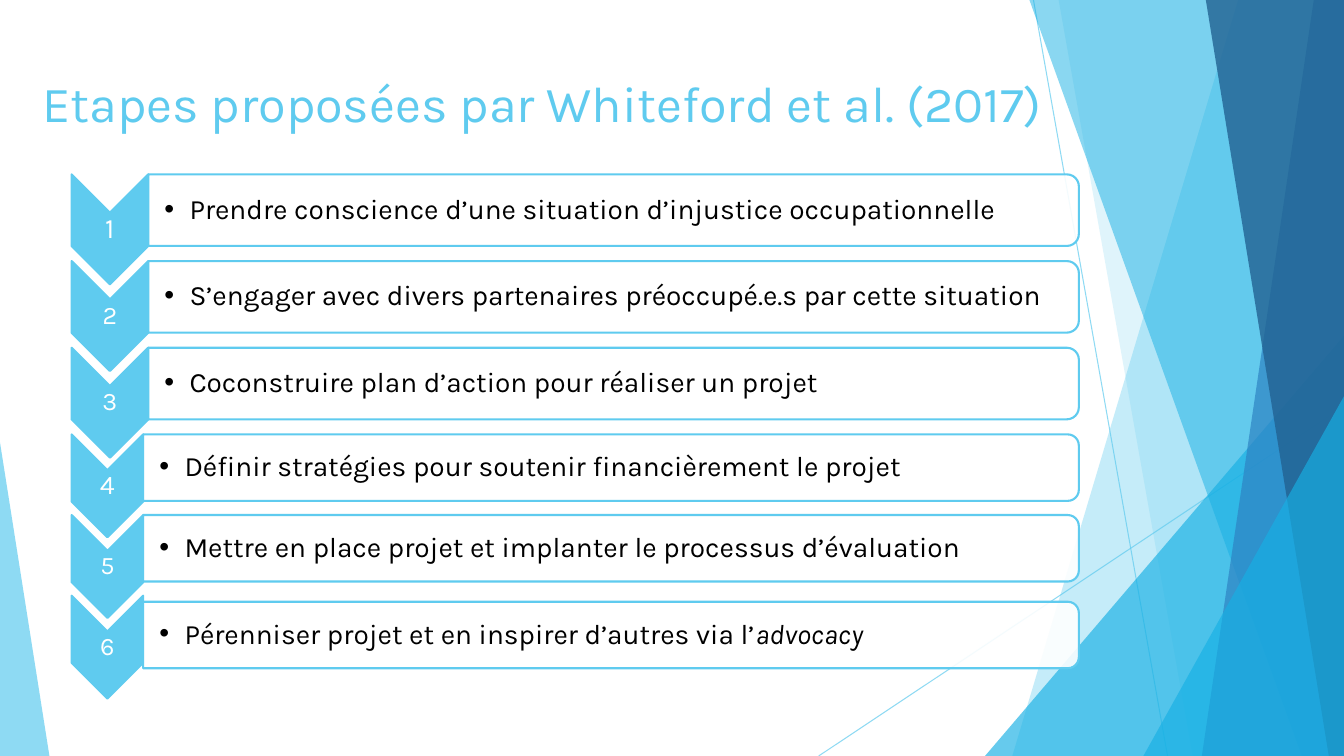
from dataclasses import dataclass

from lxml.etree import SubElement
from pptx import Presentation
from pptx.dml.color import RGBColor
from pptx.enum.shapes import MSO_CONNECTOR, MSO_SHAPE
from pptx.enum.text import MSO_ANCHOR, PP_ALIGN
from pptx.oxml.ns import qn
from pptx.util import Inches, Pt


@dataclass(frozen=True)
class Theme:
    """Colours, font and type sizes of the slide."""
    sky: str = "5FCBEF"
    cyan: str = "17B0E4"
    blue: str = "2E83C3"
    navy: str = "226292"
    white: str = "FFFFFF"
    black: str = "000000"
    font: str = "Karla"
    title_size: int = 36
    step_size: int = 20
    outline: float = 1.5
    hairline: float = 0.75


@dataclass(frozen=True)
class StepGroup:
    """Measures shared by a run of steps, in inches."""
    top: float
    pitch: float
    arrow_width: float
    arrow_length: float
    bar_height: float


class SlideBuilder:
    """Draws styled elements on one slide."""

    def __init__(self, page, theme):
        """Keep the page and its theme."""
        self.page = page
        self.theme = theme

    def set_alpha(self, shape, percent):
        """Set the opacity of the first colour of a shape."""
        color = next(shape.element.spPr.iter(qn("a:srgbClr")))
        SubElement(color, qn("a:alpha")).set("val", str(percent * 1000))

    def paint(self, shape, color, alpha=100, outline=None):
        """Fill a shape and give it an outline or none."""
        shape.shadow.inherit = False
        shape.fill.solid()
        shape.fill.fore_color.rgb = RGBColor.from_string(color)
        if alpha < 100:
            self.set_alpha(shape, alpha)
        if outline:
            shape.line.color.rgb = RGBColor.from_string(outline)
            shape.line.width = Pt(self.theme.outline)
        else:
            shape.line.fill.background()

    def hairline(self, start, end):
        """Draw a thin translucent line."""
        line = self.page.shapes.add_connector(
            MSO_CONNECTOR.STRAIGHT, *map(Inches, start + end))
        line.line.color.rgb = RGBColor.from_string(self.theme.sky)
        line.line.width = Pt(self.theme.hairline)
        self.set_alpha(line, 70)
        SubElement(line.element.spPr, qn("a:effectLst"))

    def polygon(self, points, color, alpha):
        """Draw a closed translucent outline."""
        corners = [(Inches(x), Inches(y)) for x, y in points]
        builder = self.page.shapes.build_freeform(*corners[0], scale=1.0)
        builder.add_line_segments(corners[1:], close=True)
        self.paint(builder.convert_to_shape(), color, alpha)

    def triangle(self, left, top, width, height, apex, color, alpha):
        """Draw a translucent triangle with its apex at a share of its width."""
        shape = self.page.shapes.add_shape(
            MSO_SHAPE.ISOSCELES_TRIANGLE, *map(Inches, (left, top, width, height)))
        shape.adjustments[0] = apex
        self.paint(shape, color, alpha)

    def turned_shape(self, kind, left, top, width, height, color, alpha=100):
        """Draw an outlined shape turned a quarter, placed by its visible frame."""
        shift = (width - height) / 2
        shape = self.page.shapes.add_shape(
            kind, *map(Inches, (left + shift, top - shift, height, width)))
        shape.rotation = 90
        self.paint(shape, color, alpha, self.theme.sky)

    def text(self, frame, words, size, color, anchor=MSO_ANCHOR.MIDDLE,
             margins=(0.01, 0.01, 0.01, 0.01), spacing=0.9, italic_tail=""):
        """Write one paragraph in a text box and return the paragraph."""
        box = self.page.shapes.add_textbox(*map(Inches, frame)).text_frame
        box.word_wrap = True
        box.vertical_anchor = anchor
        (box.margin_left, box.margin_top,
         box.margin_right, box.margin_bottom) = map(Inches, margins)
        para = box.paragraphs[0]
        para.line_spacing = spacing
        para.font.name = self.theme.font
        para.font.size = Pt(size)
        para.font.color.rgb = RGBColor.from_string(color)
        para.add_run().text = words
        if italic_tail:
            span = para.add_run()
            span.text = italic_tail
            span.font.italic = True
        return para

    def bullet(self, para):
        """Give a paragraph a hanging round bullet."""
        properties = para._p.get_or_add_pPr()
        properties.set("marL", str(Inches(0.25)))
        properties.set("indent", str(-Inches(0.25)))
        SubElement(properties, qn("a:buFont")).set("typeface", "Arial")
        SubElement(properties, qn("a:buChar")).set("char", "•")

    def step(self, group, row, number, number_size, words, italic_tail="", drop=0):
        """Draw a numbered chevron with its bar of text."""
        theme, width = self.theme, group.arrow_width
        left, right = 0.71, 10.7
        top = group.top + row * group.pitch
        bar_left, bar_top = left + width, top + drop
        self.turned_shape(MSO_SHAPE.CHEVRON, left, top, width,
                          group.arrow_length, theme.sky)
        number_frame = (left, top + width / 2, width, group.arrow_length - width)
        para = self.text(number_frame, number, number_size, theme.white)
        para.alignment = PP_ALIGN.CENTER
        self.turned_shape(MSO_SHAPE.ROUND_2_SAME_RECTANGLE, bar_left, bar_top,
                          right - bar_left, group.bar_height, theme.white, 90)
        words_frame = (bar_left, bar_top + 0.03, right - bar_left - 0.03,
                       group.bar_height - 0.06)
        self.bullet(self.text(words_frame, words, theme.step_size, theme.black,
                              margins=(0.16, 0.01, 0.01, 0.01),
                              italic_tail=italic_tail))


def draw_backdrop(builder):
    """Draw the translucent facets at both edges."""
    theme = builder.theme
    right, bottom = 13.33, 7.5

    def facet(top_x, bottom_x, color, alpha):
        """Draw a facet that reaches the right edge."""
        builder.polygon([(top_x, 0), (right, 0), (right, bottom),
                         (bottom_x, bottom)], color, alpha)

    builder.hairline((10.25, 0), (11.58, bottom))
    builder.hairline((right, 4.03), (8.12, bottom))
    facet(12.28, 10.04, theme.sky, 36)
    facet(10.5, 11.83, theme.sky, 20)
    builder.triangle(9.77, 3.33, 3.56, 4.17, 1, theme.cyan, 66)
    facet(10.21, 12.91, theme.cyan, 50)
    facet(13.03, 11.92, theme.blue, 70)
    facet(11.96, 13.18, theme.navy, 80)
    builder.triangle(11.34, 3.93, 1.99, 3.57, 1, theme.cyan, 66)
    builder.triangle(0, 4.39, 0.49, 3.11, 0, theme.sky, 70)


def main():
    """Build the slide and save it."""
    deck = Presentation()
    deck.slide_width, deck.slide_height = Inches(13.33), Inches(7.5)
    theme = Theme()
    builder = SlideBuilder(deck.slides.add_slide(deck.slide_layouts[6]), theme)
    draw_backdrop(builder)
    builder.text((0.32, 0.67, 10.37, 1.44),
                 "Etapes proposées par Whiteford et al. (2017)",
                 theme.title_size, theme.sky, MSO_ANCHOR.TOP,
                 (0.1, 0.05, 0.1, 0.05), 1.0)
    upper = StepGroup(1.73, 0.86, 0.76, 1.09, 0.71)
    lower = StepGroup(4.31, 0.8, 0.71, 1.02, 0.66)
    steps = [
        (upper, 0, "1", 20, "Prendre conscience d’une situation d’injustice occupationnelle"),
        (upper, 1, "2", 18, "S’engager avec divers partenaires préoccupé.e.s par cette situation"),
        (upper, 2, "3", 18, "Coconstruire plan d’action pour réaliser un projet"),
        (lower, 0, "4", 19, "Définir stratégies pour soutenir financièrement le projet"),
        (lower, 1, "5", 18, "Mettre en place projet et implanter le processus d’évaluation"),
        (lower, 2, "6", 18, "Pérenniser projet et en inspirer d’autres via l’", "advocacy", 0.06),
    ]
    for step in steps:
        builder.step(*step)
    deck.save("out.pptx")


if __name__ == "__main__":
    main()
